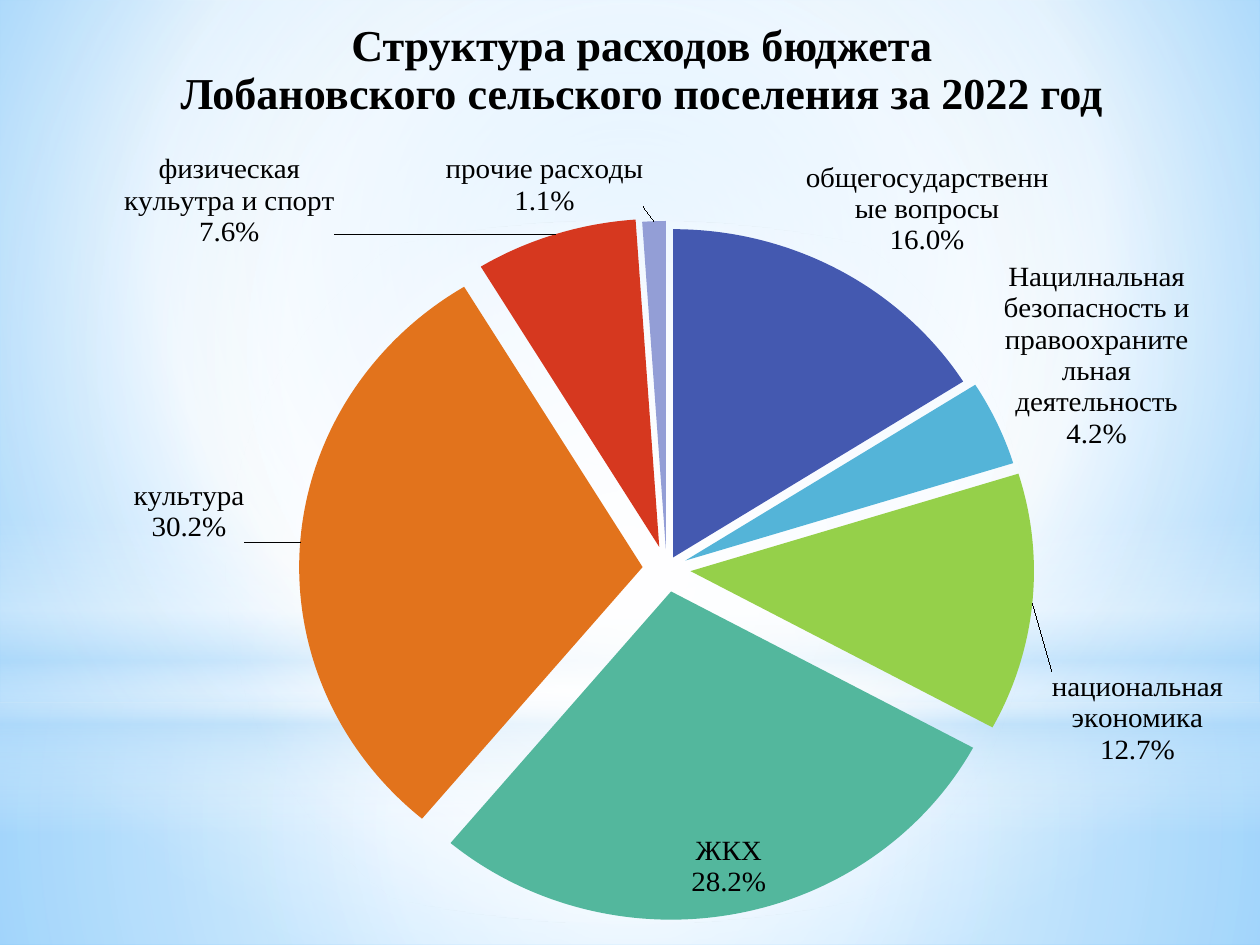
import copy
from dataclasses import dataclass
from typing import Optional

import lxml.etree
import pptx
import pptx.chart.data
import pptx.dml.color
import pptx.enum.chart
import pptx.enum.shapes
import pptx.enum.text
import pptx.oxml.ns
import pptx.util

Cm, Pt, qn = pptx.util.Cm, pptx.util.Pt, pptx.oxml.ns.qn
RECTANGLE = pptx.enum.shapes.MSO_SHAPE.RECTANGLE
OVAL = pptx.enum.shapes.MSO_SHAPE.OVAL
FONT = "Times New Roman"
WIDTH, HEIGHT = 25.4, 19.05
COLOURS = {
    "text": "000000", "white": "FFFFFF", "haze": "B4DCFA",
    "sky": "9ED5FF", "deep sky": "5BB9FF",
    "indigo": "4459B0", "blue": "54B4D8", "lime": "95D04A", "green": "53B79D",
    "orange": "E2731C", "red": "D6381F", "lilac": "939ED6",
}


@dataclass
class Gradient:
    stops: list[tuple[int, str, int]]  # position %, colour, opacity %
    focus: Optional[tuple[int, int, int, int]] = (50, 50, 50, 50)  # None: top to bottom


@dataclass
class Glow:
    preset: int
    top: float
    height: float
    gradient: Gradient


@dataclass
class Expense:
    name: str
    share: float
    colour: str
    explosion: int
    label_shift: Optional[tuple[float, float]] = None  # fractions of the chart


SKY = Gradient([(0, "sky", 100), (60, "white", 100), (100, "deep sky", 100)],
               (20, 10, 20, 60))
GLOWS = [
    Glow(RECTANGLE, 14.17, 4.88,
         Gradient([(0, "white", 91), (37, "white", 76), (100, "haze", 79)])),
    Glow(RECTANGLE, 0, 14.17,
         Gradient([(0, "white", 89), (48, "white", 62), (100, "haze", 79)])),
    Glow(RECTANGLE, 10.46, 6.35,
         Gradient([(0, "white", 0), (29, "white", 30), (45, "haze", 40),
                   (55, "white", 26), (65, "haze", 60), (100, "white", 0)], None)),
    Glow(OVAL, 4.45, 14.17, Gradient([(0, "white", 100), (56, "white", 0)])),
]
TITLE = "Структура расходов бюджета\nЛобановского сельского поселения за 2022 год"
EXPENSES = [
    Expense("общегосударственные вопросы", 0.16, "indigo", 4, (-0.03, -0.01)),
    Expense("Нацилнальная безопасность и правоохранительная деятельность",
            0.042, "blue", 6),
    Expense("национальная экономика", 0.127, "lime", 7, (0.01, 0.09)),
    Expense("ЖКХ", 0.282, "green", 7),
    Expense("культура", 0.302, "orange", 7, (-0.04, -0.04)),
    Expense("физическая кульутра и спорт", 0.076, "red", 7, (-0.18, 0.01)),
    Expense("прочие расходы", 0.011, "lilac", 6, (-0.09, -0.01)),
]


def rgb(name: str) -> pptx.dml.color.RGBColor:
    return pptx.dml.color.RGBColor.from_string(COLOURS[name])


def add_node(parent, tag: str, **attributes):
    return lxml.etree.SubElement(
        parent, qn(tag), {key: str(value) for key, value in attributes.items()})


def apply_gradient(fill, owner, gradient: Gradient) -> None:
    """Swap the solid fill inside owner for a gradient with opacity."""
    fill.solid()
    solid = owner.find(qn("a:solidFill"))
    grad_fill = lxml.etree.Element(qn("a:gradFill"), rotWithShape="1")
    stop_list = add_node(grad_fill, "a:gsLst")
    for position, colour, opacity in gradient.stops:
        stop = add_node(stop_list, "a:gs", pos=position * 1000)
        tint = add_node(stop, "a:srgbClr", val=COLOURS[colour])
        if opacity < 100:
            add_node(tint, "a:alpha", val=opacity * 1000)
    if gradient.focus:
        circle = add_node(grad_fill, "a:path", path="circle")
        sides = zip("ltrb", gradient.focus)
        add_node(circle, "a:fillToRect", **{side: inset * 1000 for side, inset in sides})
    else:
        add_node(grad_fill, "a:lin", ang=90 * 60000, scaled=0)
    owner.replace(solid, grad_fill)


def add_glow(slide, glow: Glow) -> None:
    shape = slide.shapes.add_shape(glow.preset, 0, Cm(glow.top), Cm(WIDTH), Cm(glow.height))
    shape.shadow.inherit = False
    shape.line.fill.background()
    apply_gradient(shape.fill, shape._element.spPr, glow.gradient)


def add_title(slide) -> None:
    frame = slide.shapes.add_textbox(Cm(0.89), Cm(0.33), Cm(24.1), Cm(2.21)).text_frame
    frame.word_wrap = True
    frame.vertical_anchor = pptx.enum.text.MSO_ANCHOR.MIDDLE
    frame.text = TITLE
    for paragraph in frame.paragraphs:
        paragraph.alignment = pptx.enum.text.PP_ALIGN.CENTER
        paragraph.line_spacing = 0.9
        font = paragraph.runs[0].font
        font.name, font.size, font.bold = FONT, Pt(25.2), True
        font.color.rgb = rgb("text")


def add_layout(parent, **values) -> None:
    manual = add_node(add_node(parent, "c:layout"), "c:manualLayout")
    for tag, value in values.items():
        add_node(manual, f"c:{tag}", val=value)


def label_expenses(series) -> None:
    labels = series.data_labels
    labels.show_value = labels.show_category_name = True
    labels.number_format, labels.number_format_is_linked = "0.0%", False
    labels.position = pptx.enum.chart.XL_LABEL_POSITION.BEST_FIT
    labels.font.name, labels.font.size = FONT, Pt(16.6)
    labels.font.color.rgb = rgb("text")
    common = labels._element
    separator = lxml.etree.Element(qn("c:separator"))
    separator.text = "\n"
    common.find(qn("c:showBubbleSize")).addnext(separator)
    settings = [node for node in common if node.tag != qn("c:showLeaderLines")]

    # Shifted labels share the common settings
    shifted = [(i, e.label_shift) for i, e in enumerate(EXPENSES) if e.label_shift]
    for order, (index, (x, y)) in enumerate(shifted):
        label = lxml.etree.Element(qn("c:dLbl"))
        add_node(label, "c:idx", val=index)
        add_layout(label, x=x, y=y)
        label.extend(copy.deepcopy(settings))
        common.insert(order, label)


def add_expense_pie(slide) -> None:
    data = pptx.chart.data.CategoryChartData(number_format="0.0%")
    data.categories = [expense.name for expense in EXPENSES]
    data.add_series("Series 1", [expense.share for expense in EXPENSES])
    chart = slide.shapes.add_chart(
        pptx.enum.chart.XL_CHART_TYPE.PIE,
        Cm(0.51), Cm(2.69), Cm(24.51), Cm(15.85), data).chart
    chart.has_legend = chart.has_title = False
    chart.font.name, chart.font.size = "Lato", Pt(18)
    chart.font.color.rgb = rgb("text")
    plot = chart.plots[0]
    plot.vary_by_categories = True
    series = plot.series[0]

    # Slices
    for index, expense in enumerate(EXPENSES):
        slice_format = series.points[index].format
        slice_format.fill.solid()
        slice_format.fill.fore_color.rgb = rgb(expense.colour)
        slice_format.line.fill.background()
        explosion = lxml.etree.Element(qn("c:explosion"), val=str(expense.explosion))
        point = series._element.findall(qn("c:dPt"))[index]
        point.find(qn("c:spPr")).addprevious(explosion)
    label_expenses(series)

    # Inner plot area
    plot_area = chart._chartSpace.chart.plotArea
    for old_layout in plot_area.findall(qn("c:layout")):
        plot_area.remove(old_layout)
    add_layout(plot_area, layoutTarget="inner", xMode="edge", yMode="edge",
               x=0.245, y=0.115, w=0.565, h=0.875)
    plot_area.insert(0, plot_area[-1])


def main() -> None:
    deck = pptx.Presentation()
    deck.slide_width, deck.slide_height = Cm(WIDTH), Cm(HEIGHT)
    slide = deck.slides.add_slide(deck.slide_layouts[6])

    # Backdrop
    background = slide.background.fill
    background.solid()
    apply_gradient(background, slide._element.xpath(".//p:bgPr")[0], SKY)
    for glow in GLOWS:
        add_glow(slide, glow)

    # Content
    add_title(slide)
    add_expense_pie(slide)
    deck.save("out.pptx")


if __name__ == "__main__":
    main()
